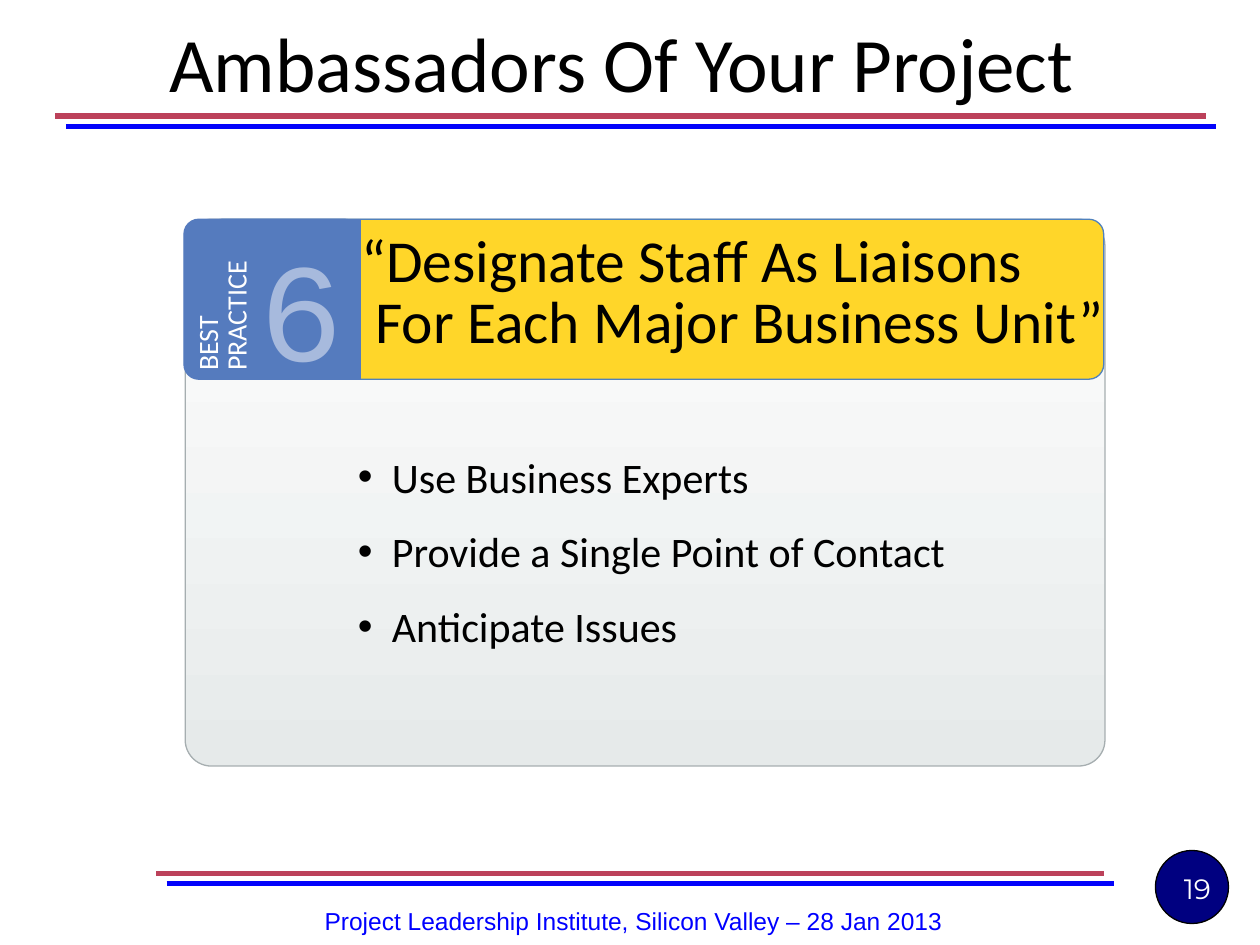
"""Build the "Ambassadors Of Your Project" best practice slide."""
from lxml.etree import SubElement
from pptx import Presentation
from pptx.dml.color import RGBColor
from pptx.enum.shapes import MSO_CONNECTOR, MSO_SHAPE
from pptx.enum.text import MSO_ANCHOR, MSO_AUTO_SIZE, PP_ALIGN
from pptx.oxml import parse_xml
from pptx.oxml.ns import nsdecls, qn
from pptx.util import Inches, Pt

BLACK = RGBColor(0x00, 0x00, 0x00)
WHITE = RGBColor(0xFF, 0xFF, 0xFF)
BLUE = RGBColor(0x00, 0x00, 0xFF)
NAVY = RGBColor(0x00, 0x00, 0x80)
RED = RGBColor(0xBC, 0x41, 0x5A)
YELLOW = RGBColor(0xFF, 0xD6, 0x29)
BANNER_LINE = RGBColor(0x4F, 0x81, 0xBD)
TAB_BLUE = RGBColor(0x55, 0x7B, 0xBE)
PALE_BLUE = RGBColor(0xA7, 0xBA, 0xDD)
PANEL_GREY = RGBColor(0xE6, 0xEA, 0xEA)
PANEL_LINE = RGBColor(0xA6, 0xAE, 0xB0)

TITLE = "Ambassadors Of Your Project"
LABEL = ["BEST", "PRACTICE"]
NUMBER = "6"
PRACTICE = ["“Designate Staff As Liaisons", "For Each Major Business Unit”"]
ADVICE = ["Use Business Experts", "Provide a Single Point of Contact", "Anticipate Issues"]
FOOTER = "Project Leadership Institute, Silicon Valley – 28 Jan 2013"
PAGE = "19"

CARD_TOP, BANNER_HEIGHT = 1.74, 1.27
RULES = [(1.24, 8.76, 6.93), (0.44, 9.57, 0.92)]
SHADOW = (
    f'<a:effectLst {nsdecls("a")}><a:outerShdw dist="107950" dir="2700000" algn="ctr" rotWithShape="0">'
    '<a:srgbClr val="0303FB"/></a:outerShdw></a:effectLst>'
)


def add_rule(slide, left, right, top):
    """Draw a red rule with a hard blue shadow."""
    rule = slide.shapes.add_connector(
        MSO_CONNECTOR.STRAIGHT, Inches(left), Inches(top), Inches(right), Inches(top))
    rule.line.color.rgb = RED
    rule.line.width = Pt(3)
    rule.element.spPr.append(parse_xml(SHADOW))


def add_block(slide, kind, box, fill, line, corner=None):
    """Draw a preset shape with a thin outline."""
    shape = slide.shapes.add_shape(kind, *map(Inches, box))
    shape.shadow.inherit = False
    if corner is not None:
        shape.adjustments[0] = corner
    if fill is not None:
        shape.fill.solid()
        shape.fill.fore_color.rgb = fill
    shape.line.color.rgb = line
    shape.line.width = Pt(0.75)
    return shape


def write(shape, lines, size, font, color, align=PP_ALIGN.LEFT, anchor=MSO_ANCHOR.TOP, spacing=1.0):
    """Write one paragraph per line and return the paragraphs."""
    frame = shape.text_frame
    frame.word_wrap = True
    frame.auto_size = MSO_AUTO_SIZE.NONE
    frame.vertical_anchor = anchor
    for index, line in enumerate(lines):
        paragraph = frame.paragraphs[0] if index == 0 else frame.add_paragraph()
        paragraph.alignment = align
        paragraph.line_spacing = spacing
        paragraph.space_before = Pt(0)
        run = paragraph.add_run()
        run.text = line
        run.font.size = Pt(size)
        run.font.name = font
        run.font.color.rgb = color
    return frame.paragraphs


def add_text(slide, box, *content, **layout):
    """Add a text box and write into it."""
    shape = slide.shapes.add_textbox(*map(Inches, box))
    write(shape, *content, **layout)
    return shape


def place(slide, placeholder, box):
    """Move a placeholder to a box in front of the other shapes."""
    placeholder.left, placeholder.top, placeholder.width, placeholder.height = map(Inches, box)
    slide.shapes.element.append(placeholder.element)


def add_bullet(paragraph):
    """Give a paragraph a round bullet with a hanging indent."""
    properties = paragraph._p.get_or_add_pPr()
    properties.set("marL", str(Inches(0.27)))
    properties.set("indent", str(-Inches(0.27)))
    SubElement(properties, qn("a:buFont"), typeface="Arial")
    SubElement(properties, qn("a:buChar"), char="•")


def add_card(slide):
    """Draw the grey panel, the yellow banner and its blue tab."""
    rounded = MSO_SHAPE.ROUNDED_RECTANGLE
    panel = add_block(slide, rounded, (1.47, CARD_TOP, 7.3, 4.34), None, PANEL_LINE, 0.048)
    panel.fill.gradient()
    panel.fill.gradient_angle = 270
    for stop, color in zip(panel.fill.gradient_stops, (WHITE, PANEL_GREY)):
        stop.color.rgb = color
    for kind, left, width, fill, line, corner in (
        (rounded, 1.65, 7.11, YELLOW, BANNER_LINE, 0.093),
        (rounded, 1.46, 1.39, TAB_BLUE, TAB_BLUE, 0.093),
        (MSO_SHAPE.RECTANGLE, 2.67, 0.19, TAB_BLUE, TAB_BLUE, None),
    ):
        add_block(slide, kind, (left, CARD_TOP, width, BANNER_HEIGHT), fill, line, corner)
    label = add_text(slide, (1.12, 2.1, 1.32, 0.56), LABEL, 16, "Calibri", WHITE, spacing=0.85)
    label.rotation = 270
    add_text(slide, (1.96, 1.71, 1.09, 1.43), [NUMBER], 80, "Courier New", PALE_BLUE)
    practice = add_text(slide, (2.77, 1.81, 6.15, 1.08), PRACTICE, 34, "Calibri", BLACK, spacing=0.85)
    practice.text_frame.margin_right = 0
    practice.text_frame.paragraphs[1]._p.get_or_add_pPr().set("marL", str(Inches(0.11)))


def main():
    """Assemble and save the slide."""
    presentation = Presentation()
    presentation.slide_width, presentation.slide_height = Inches(10), Inches(7.5)
    slide = presentation.slides.add_slide(presentation.slide_layouts[1])
    title, body = slide.placeholders

    add_text(slide, (1.31, 7.05, 7.44, 0.52), [FOOTER], 14, "Arial", BLUE,
             align=PP_ALIGN.CENTER, anchor=MSO_ANCHOR.MIDDLE)
    for rule in RULES:
        add_rule(slide, *rule)
    add_block(slide, MSO_SHAPE.OVAL, (9.17, 6.75, 0.58, 0.58), NAVY, BLACK)
    add_text(slide, (7.38, 6.87, 2.33, 0.52), [PAGE], 16, "Montserrat", WHITE, align=PP_ALIGN.RIGHT)
    add_card(slide)

    place(slide, body, (2.74, 3.53, 5.86, 1.78))
    for paragraph in write(body, ADVICE, 24, "Calibri", BLACK):
        paragraph.space_after = Pt(14)
        add_bullet(paragraph)
    place(slide, title, (1.17, 0.19, 7.53, 0.6))
    write(title, [TITLE], 44, "Calibri", BLACK, align=PP_ALIGN.CENTER, anchor=MSO_ANCHOR.MIDDLE)
    presentation.save("out.pptx")


if __name__ == "__main__":
    main()
